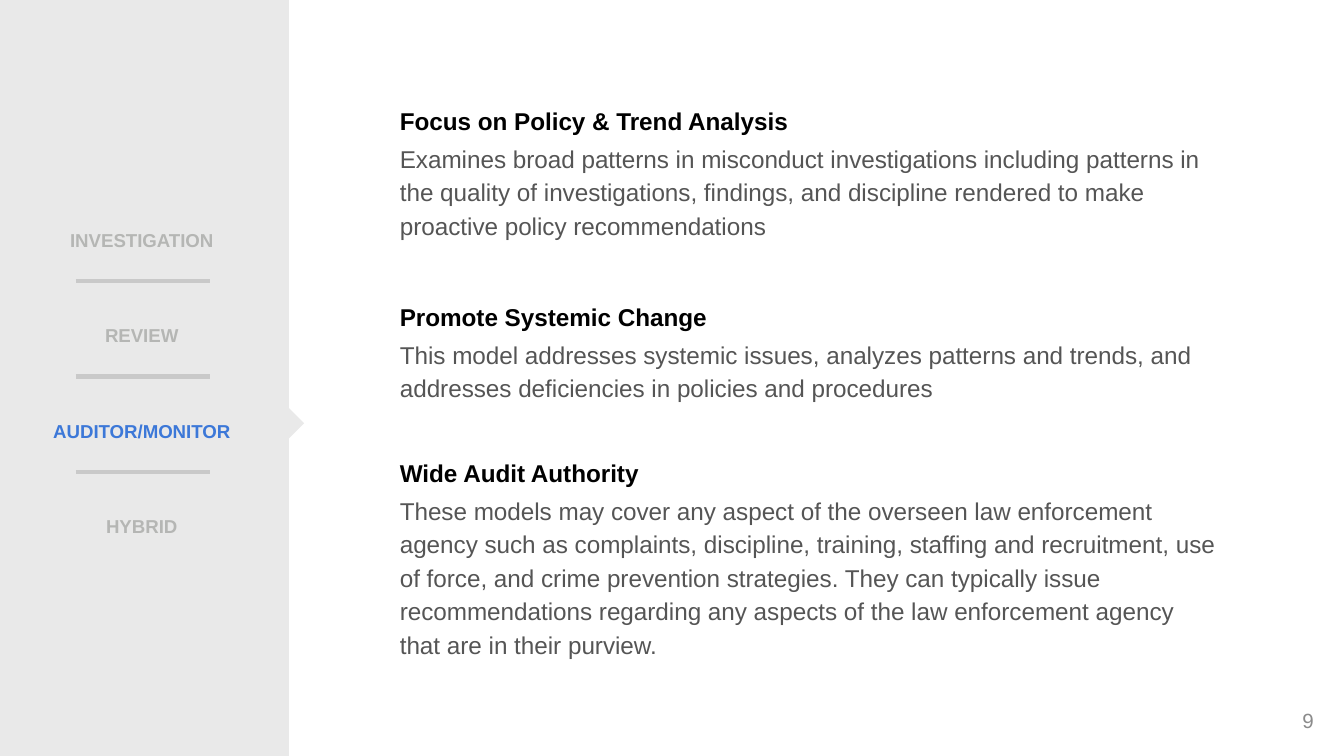
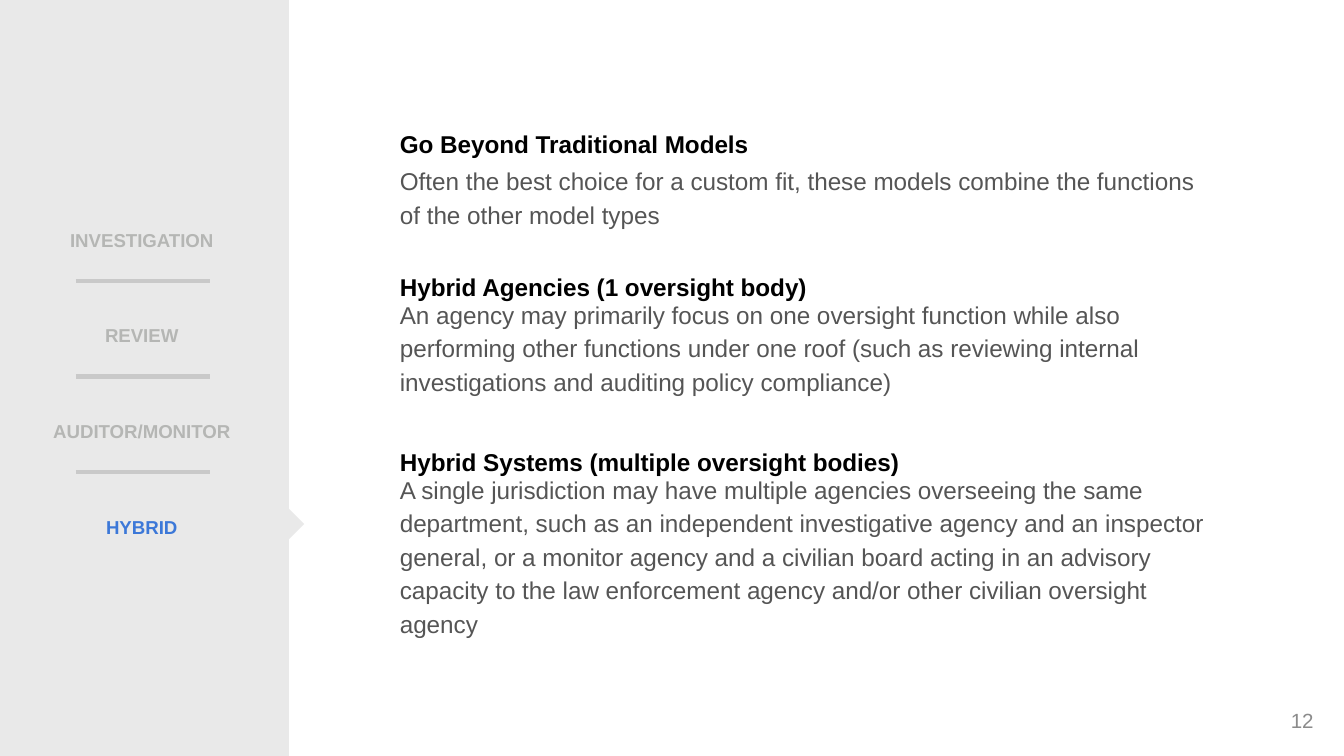
import pptx
import pptx.util
import pptx.dml.color
import pptx.enum.shapes
import pptx.enum.text
import lxml.etree
import pptx.oxml.ns

COLORS = {
    "band": "E9E9E9",
    "divider": "C9C9C9",
    "heading": "000000",
    "body": "555555",
    "label": "B5B6B4",
    "active": "3C78D8",
    "number": "8B8B8B",
}
ALIGN = pptx.enum.text.PP_ALIGN
ANCHOR = pptx.enum.text.MSO_ANCHOR
SHAPE = pptx.enum.shapes.MSO_SHAPE

# Widescreen slide, 16 to 9
presentation = pptx.Presentation()
presentation.slide_width = pptx.util.Inches(10)
presentation.slide_height = presentation.slide_width * 9 // 16

# Grid: 100 columns by 100 rows over the whole slide
COLUMN = presentation.slide_width / 100
ROW = presentation.slide_height / 100
LABEL_TOP, LABEL_STEP = 28.3, 12.65
LABEL_HEIGHT, HEADING_HEIGHT = 5.33, 6.04
DIVIDER_TOP = 37.15
TEXT_LEFT = 29.35

MODELS = ["INVESTIGATION", "REVIEW", "AUDITOR/MONITOR", "HYBRID"]


def grid(left, top, width, height):
    """Turn columns and rows into slide lengths."""
    return [round(n) for n in (left * COLUMN, top * ROW, width * COLUMN, height * ROW)]


def write_text(slide, text, at, placeholder=None, size=13, color="body", bold=False,
               align=ALIGN.LEFT, anchor=ANCHOR.TOP, spacing=1.0,
               insets=(0.04, 0.02, 0.04, 0.02)):
    """Write one paragraph in a placeholder, or in a new text box."""
    shape = placeholder
    if shape is None:
        shape = slide.shapes.add_textbox(*grid(*at))
    else:
        shape.left, shape.top, shape.width, shape.height = grid(*at)
        # Bring the placeholder in front of the side band
        shape.element.getparent().append(shape.element)
    frame = shape.text_frame
    frame.word_wrap = True
    frame.auto_size = pptx.enum.text.MSO_AUTO_SIZE.NONE
    frame.vertical_anchor = anchor
    (frame.margin_left, frame.margin_top,
     frame.margin_right, frame.margin_bottom) = map(pptx.util.Inches, insets)
    paragraph = frame.paragraphs[0]
    properties = paragraph._p.get_or_add_pPr()
    properties.set("marL", "0")
    properties.set("indent", "0")
    lxml.etree.SubElement(properties, pptx.oxml.ns.qn("a:buNone"))
    paragraph.alignment = align
    paragraph.line_spacing = spacing
    paragraph.space_before = pptx.util.Pt(0)
    run = paragraph.add_run()
    run.text = text
    run.font.name = "Arial"
    run.font.size = pptx.util.Pt(size)
    run.font.bold = bold
    run.font.color.rgb = pptx.dml.color.RGBColor.from_string(COLORS[color])


# Sections: heading, heading row, rows down to the body, body height, body text
slides = [
    {
        "number": "9", "active": "AUDITOR/MONITOR", "marker_top": 54.58, "body_width": 61.6,
        "sections": [
            ("Focus on Policy & Trend Analysis", 11.73, 6.4, 14.76,
             "Examines broad patterns in misconduct investigations including patterns in the "
             "quality of investigations, findings, and discipline rendered to make proactive "
             "policy recommendations"),
            ("Promote Systemic Change", 37.65, 6.4, 11.91,
             "This model addresses systemic issues, analyzes patterns and trends, and addresses "
             "deficiencies in policies and procedures"),
            ("Wide Audit Authority", 58.27, 6.4, 24.71,
             "These models may cover any aspect of the overseen law enforcement agency such as "
             "complaints, discipline, training, staffing and recruitment, use of force, and crime "
             "prevention strategies. They can typically issue recommendations regarding any "
             "aspects of the law enforcement agency that are in their purview."),
        ],
    },
    {
        "number": "12", "active": "HYBRID", "marker_top": 67.91, "body_width": 61,
        "sections": [
            ("Go Beyond Traditional Models", 14.75, 6.35, 11.91,
             "Often the best choice for a custom fit, these models combine the functions of the "
             "other model types"),
            ("Hybrid Agencies (1 oversight body)", 33.78, 4.95, 11.91,
             "An agency may primarily focus on one oversight function while also performing other "
             "functions under one roof (such as reviewing internal investigations and auditing "
             "policy compliance)"),
            ("Hybrid Systems (multiple oversight bodies)", 56.9, 4.98, 24.53,
             "A single jurisdiction may have multiple agencies overseeing the same department, "
             "such as an independent investigative agency and an inspector general, or a monitor "
             "agency and a civilian board acting in an advisory capacity to the law enforcement "
             "agency and/or other civilian oversight agency"),
        ],
    },
]

comparison_layout = presentation.slide_layouts[4]
for content in slides:
    slide = presentation.slides.add_slide(comparison_layout)
    title, *text_placeholders = slide.placeholders

    # Side band and the marker pointing from the active model
    for at, rotation in [((0, 0, 21.5, 100), 0),
                         ((20.7, content["marker_top"], 1.6, 2.84), 45)]:
        shape = slide.shapes.add_shape(SHAPE.RECTANGLE, *grid(*at))
        shape.rotation = rotation
        shape.shadow.inherit = False
        shape.fill.solid()
        shape.fill.fore_color.rgb = pptx.dml.color.RGBColor.from_string(COLORS["band"])
        shape.line.fill.background()

    # Dividers between the model names
    for index in range(len(MODELS) - 1):
        left, top, width, _ = grid(5.65, DIVIDER_TOP + index * LABEL_STEP, 9.95, 0)
        divider = slide.shapes.add_connector(
            pptx.enum.shapes.MSO_CONNECTOR.STRAIGHT, left, top, left + width, top)
        divider.line.color.rgb = pptx.dml.color.RGBColor.from_string(COLORS["divider"])
        divider.line.width = pptx.util.Pt(2.25)
        lxml.etree.SubElement(divider.element.spPr, pptx.oxml.ns.qn("a:effectLst"))

    # Model names; the active one is the slide title
    for index, model in enumerate(MODELS):
        active = model == content["active"]
        write_text(slide, model, (3.45, LABEL_TOP + index * LABEL_STEP, 14.6, LABEL_HEIGHT),
                   placeholder=title if active else None, size=10, bold=True,
                   color="active" if active else "label", align=ALIGN.CENTER,
                   anchor=ANCHOR.MIDDLE, spacing=1.5, insets=(0, 0.04, 0.04, 0.04))

    # Headings and their texts; the layout holds two pairs, the third uses text boxes
    holders = iter(text_placeholders)
    for heading, top, offset, height, body in content["sections"]:
        write_text(slide, heading, (TEXT_LEFT, top, 43.1, HEADING_HEIGHT),
                   placeholder=next(holders, None), color="heading", bold=True, spacing=1.5)
        write_text(slide, body, (TEXT_LEFT, top + offset, content["body_width"], height),
                   placeholder=next(holders, None), spacing=1.15)

    # Slide number
    write_text(slide, content["number"], (75.65, 92.65, 22.5, LABEL_HEIGHT), size=11,
               color="number", align=ALIGN.RIGHT, anchor=ANCHOR.MIDDLE)

presentation.save("out.pptx")
